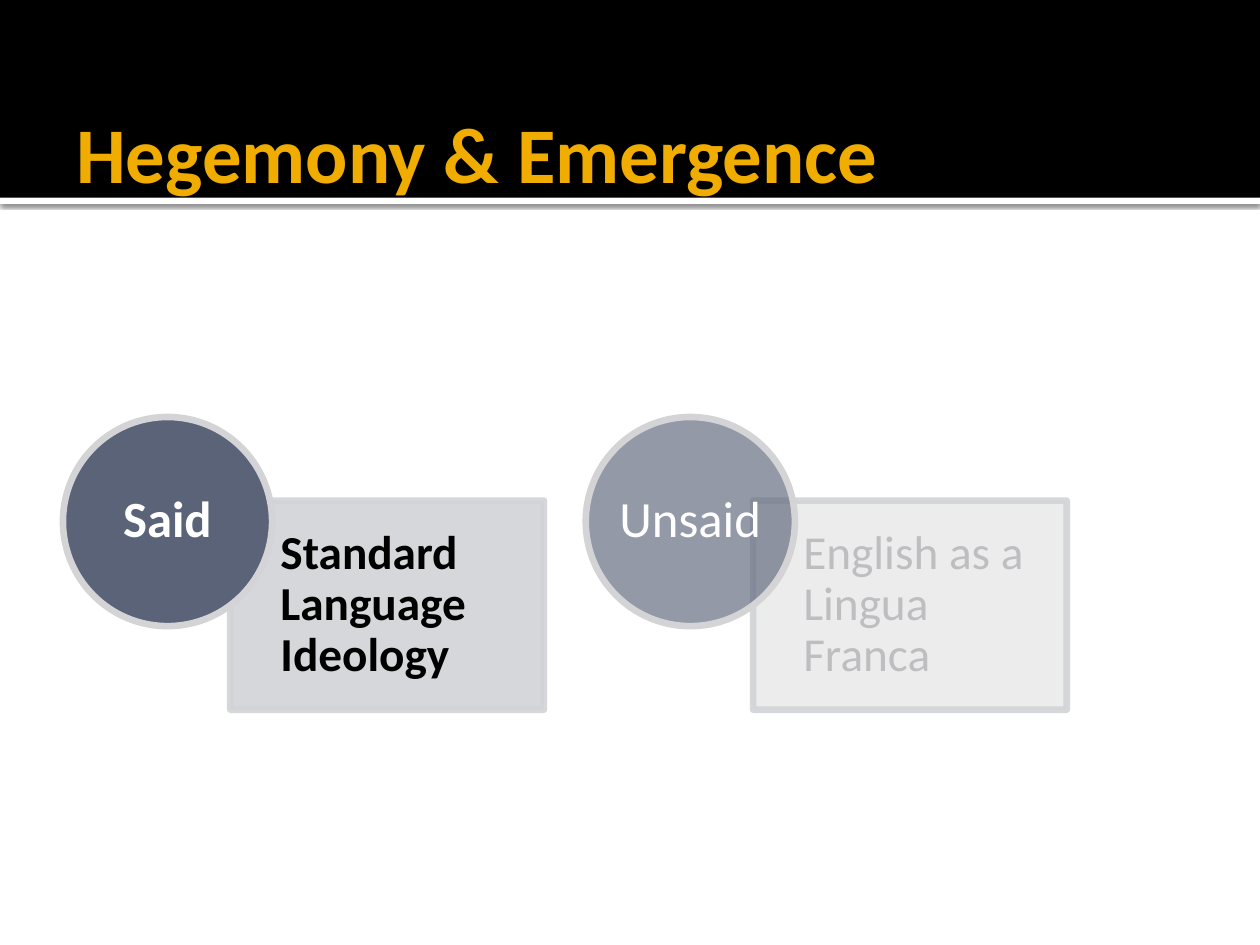
import pptx
import pptx.util
import pptx.dml.color
import pptx.enum.shapes
import pptx.enum.text
import pptx.oxml
import pptx.oxml.ns

Pt = pptx.util.Pt
RGBColor = pptx.dml.color.RGBColor
SHAPE = pptx.enum.shapes.MSO_SHAPE
ALIGN = pptx.enum.text.PP_ALIGN
qn = pptx.oxml.ns.qn

BLACK = RGBColor(0x00, 0x00, 0x00)
WHITE = RGBColor(0xFF, 0xFF, 0xFF)
GOLD = RGBColor(0xF0, 0xAD, 0x00)
SLATE = RGBColor(0x5A, 0x63, 0x78)
CARD_GRAY = RGBColor(0xD2, 0xD3, 0xD6)
RING_GRAY = RGBColor(0xD4, 0xD4, 0xD6)
FADED_TEXT = RGBColor(0xBE, 0xBE, 0xC1)

FONT = "Calibri"
SLIDE_W, SLIDE_H = 720, 540


def set_alpha(sp, parent, percent):
    """Set the opacity of the solid fill found under parent in the shape."""
    color = sp._element.spPr.find(f"{parent}{qn('a:solidFill')}/{qn('a:srgbClr')}")
    alpha = color.makeelement(qn("a:alpha"), {"val": str(percent * 1000)})
    color.append(alpha)


def add_block(s, kind, x, y, w, h, fill, line=None, opacity=100):
    sp = s.shapes.add_shape(kind, Pt(x), Pt(y), Pt(w), Pt(h))
    sp.shadow.inherit = False
    sp.fill.solid()
    sp.fill.fore_color.rgb = fill
    if opacity < 100:
        set_alpha(sp, "", opacity)
    if line is None:
        sp.line.fill.background()
    else:
        sp.line.color.rgb = line
        sp.line.width = Pt(3.78)
    return sp


def write(sp, text, size, color, bold, align, insets, wrap=True, spacing=1.0):
    tf = sp.text_frame
    tf.word_wrap = wrap
    tf.vertical_anchor = pptx.enum.text.MSO_ANCHOR.MIDDLE
    tf.margin_left, tf.margin_top, tf.margin_right, tf.margin_bottom = map(Pt, insets)
    p = tf.paragraphs[0]
    p.text = text
    p.alignment = align
    p.line_spacing = spacing
    p.font.name = FONT
    p.font.size = Pt(size)
    p.font.bold = bold
    p.font.color.rgb = color


def add_header(s, x, y, w, h):
    # White strip with a soft shadow below the black band
    strip = add_block(s, SHAPE.RECTANGLE, x, y + h, w, 3.6, WHITE)
    strip._element.spPr.find(qn("a:effectLst")).append(pptx.oxml.parse_xml(
        '<a:outerShdw xmlns:a="http://schemas.openxmlformats.org/drawingml/2006/main"'
        ' blurRad="31750" dist="10160" dir="5400000" algn="tl" rotWithShape="0">'
        '<a:srgbClr val="000000"><a:alpha val="60000"/></a:srgbClr></a:outerShdw>'))
    add_block(s, SHAPE.RECTANGLE, x, y, w, h, BLACK)

    # Title
    title = s.shapes.add_textbox(Pt(x + 36.5), Pt(y + 37.5), Pt(648), Pt(98.5))
    write(title, "Hegemony & Emergence", 45, GOLD, True, ALIGN.LEFT, (7.2, 3.6, 3.6, 3.6))


def add_pair(s, x, y, d, label, detail, bold, text_color, card_opacity, disc_opacity):
    """A disc of diameter d overlapping the corner of its card."""
    # Card
    card = add_block(s, SHAPE.RECTANGLE, x + 0.8 * d, y + 0.4 * d, 1.5 * d, d,
                     CARD_GRAY, CARD_GRAY, card_opacity)
    set_alpha(card, qn("a:ln") + "/", 90)
    write(card, detail, 27, text_color, bold, ALIGN.LEFT,
          (0.24 * d, 15, 15, 15), spacing=0.9)

    # Disc
    disc = add_block(s, SHAPE.OVAL, x, y, d, d, SLATE, RING_GRAY, disc_opacity)
    write(disc, label, 29, WHITE, bold, ALIGN.CENTER, (0, 0, 0, 0),
          wrap=False, spacing=0.9)


def main():
    prs = pptx.Presentation()
    prs.slide_width, prs.slide_height = Pt(SLIDE_W), Pt(SLIDE_H)
    s = prs.slides.add_slide(prs.slide_layouts[6])

    add_header(s, 0, 0, SLIDE_W, 113)

    d = 119.5
    pairs = [
        ("Said", "Standard Language Ideology", True, BLACK, 90, 100),
        ("Unsaid", "English as a Lingua Franca", False, FADED_TEXT, 42, 65),
    ]
    for i, pair in enumerate(pairs):
        add_pair(s, 36 + i * 2.5 * d, 238.3, d, *pair)

    prs.save("out.pptx")


if __name__ == "__main__":
    main()
